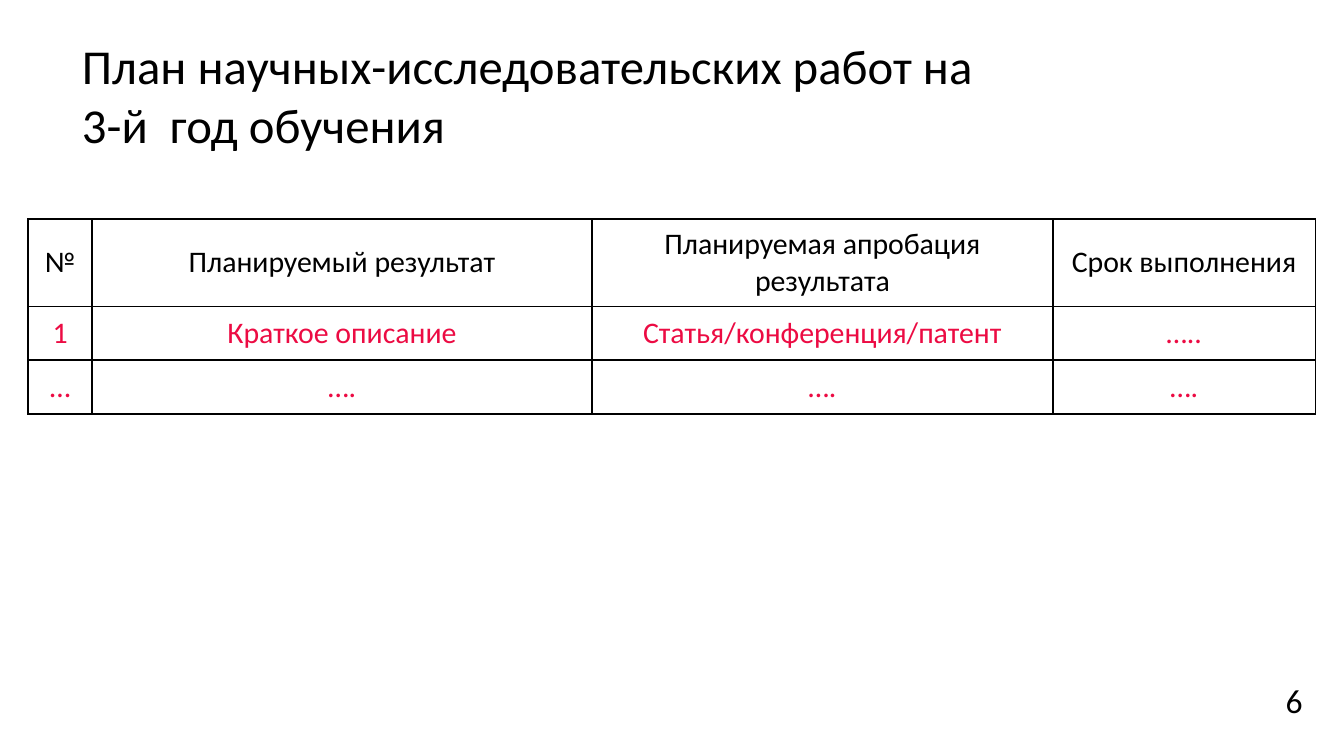
from lxml.etree import SubElement
from pptx import Presentation
from pptx.dml.color import RGBColor
from pptx.enum.text import MSO_ANCHOR, PP_ALIGN
from pptx.oxml.ns import qn
from pptx.util import Cm, Pt

BLACK = RGBColor(0x00, 0x00, 0x00)
CRIMSON = RGBColor(0xEC, 0x0B, 0x43)
FONT = "Calibri"

COLUMN_WIDTHS = (1.21, 9.45, 8.71, 4.96)
ROW_HEIGHTS = (1.65, 1.02, 1.02)
PLAN = (
    ("№", "Планируемый результат", "Планируемая апробация результата", "Срок выполнения"),
    ("1", "Краткое описание", "Статья/конференция/патент", "….."),
    ("…", "….", "….", "…."),
)


def style_text(para, size, color):
    for span in para.runs:
        span.font.name = FONT
        span.font.size = Pt(size)
        span.font.color.rgb = color


def add_text(page, left, top, width, height, text, size, anchor, wrap):
    box = page.shapes.add_textbox(Cm(left), Cm(top), Cm(width), Cm(height))
    frame = box.text_frame
    frame.word_wrap = wrap
    frame.vertical_anchor = anchor
    frame.text = text
    style_text(frame.paragraphs[0], size, BLACK)


def add_borders(cell):
    """Draw a thin line on all four sides; borders must precede the fill in the XML."""
    properties = cell._tc.get_or_add_tcPr()
    for index, side in enumerate(("a:lnL", "a:lnR", "a:lnT", "a:lnB")):
        line = SubElement(properties, qn(side), w=str(Pt(1)))
        fill = SubElement(line, qn("a:solidFill"))
        SubElement(fill, qn("a:srgbClr"), val=str(BLACK))
        properties.insert(index, line)


def add_plan_table(page, left, top):
    table = page.shapes.add_table(
        len(ROW_HEIGHTS), len(COLUMN_WIDTHS), Cm(left), Cm(top),
        Cm(sum(COLUMN_WIDTHS)), Cm(sum(ROW_HEIGHTS))).table
    table.first_row = False
    table.horz_banding = False
    for column, width in zip(table.columns, COLUMN_WIDTHS):
        column.width = Cm(width)
    for row_index, (row, height) in enumerate(zip(table.rows, ROW_HEIGHTS)):
        row.height = Cm(height)
        for cell, text in zip(row.cells, PLAN[row_index]):
            cell.text = text
            cell.vertical_anchor = MSO_ANCHOR.MIDDLE
            cell.fill.background()
            add_borders(cell)
            para = cell.text_frame.paragraphs[0]
            para.alignment = PP_ALIGN.CENTER
            style_text(para, 16, CRIMSON if row_index else BLACK)


def main():
    deck = Presentation()
    deck.slide_width, deck.slide_height = Cm(25.4), Cm(14.29)
    page = deck.slides.add_slide(deck.slide_layouts[6])
    add_text(page, 1.3, 1.55, 17.48, 1.47,
             "План научных-исследовательских работ на 3-й  год обучения",
             26.1, MSO_ANCHOR.BOTTOM, True)
    add_plan_table(page, 0.53, 4.14)
    add_text(page, 24.05, 12.73, 0.74, 1.02, "6", 18, MSO_ANCHOR.TOP, False)
    deck.save("out.pptx")


if __name__ == "__main__":
    main()
